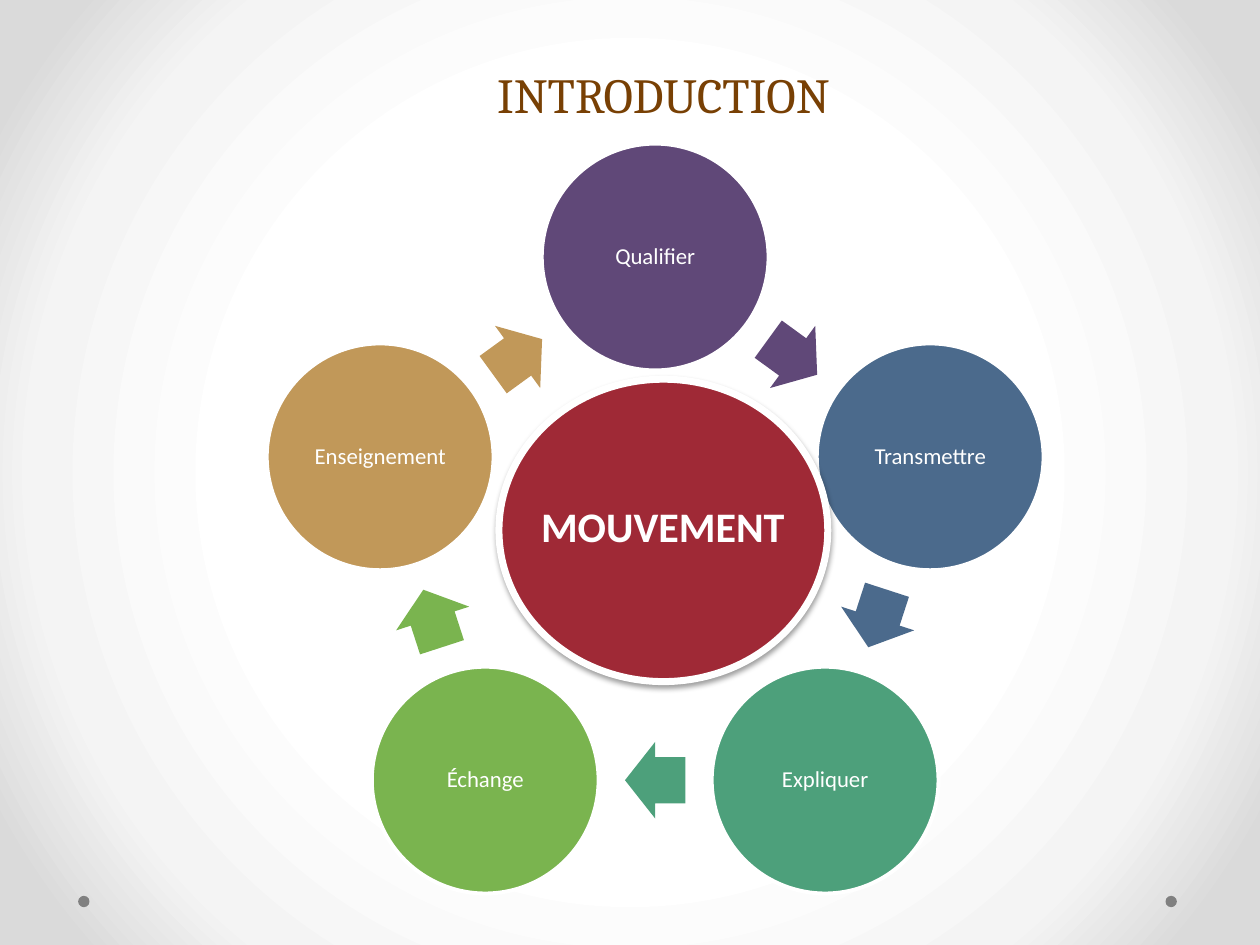
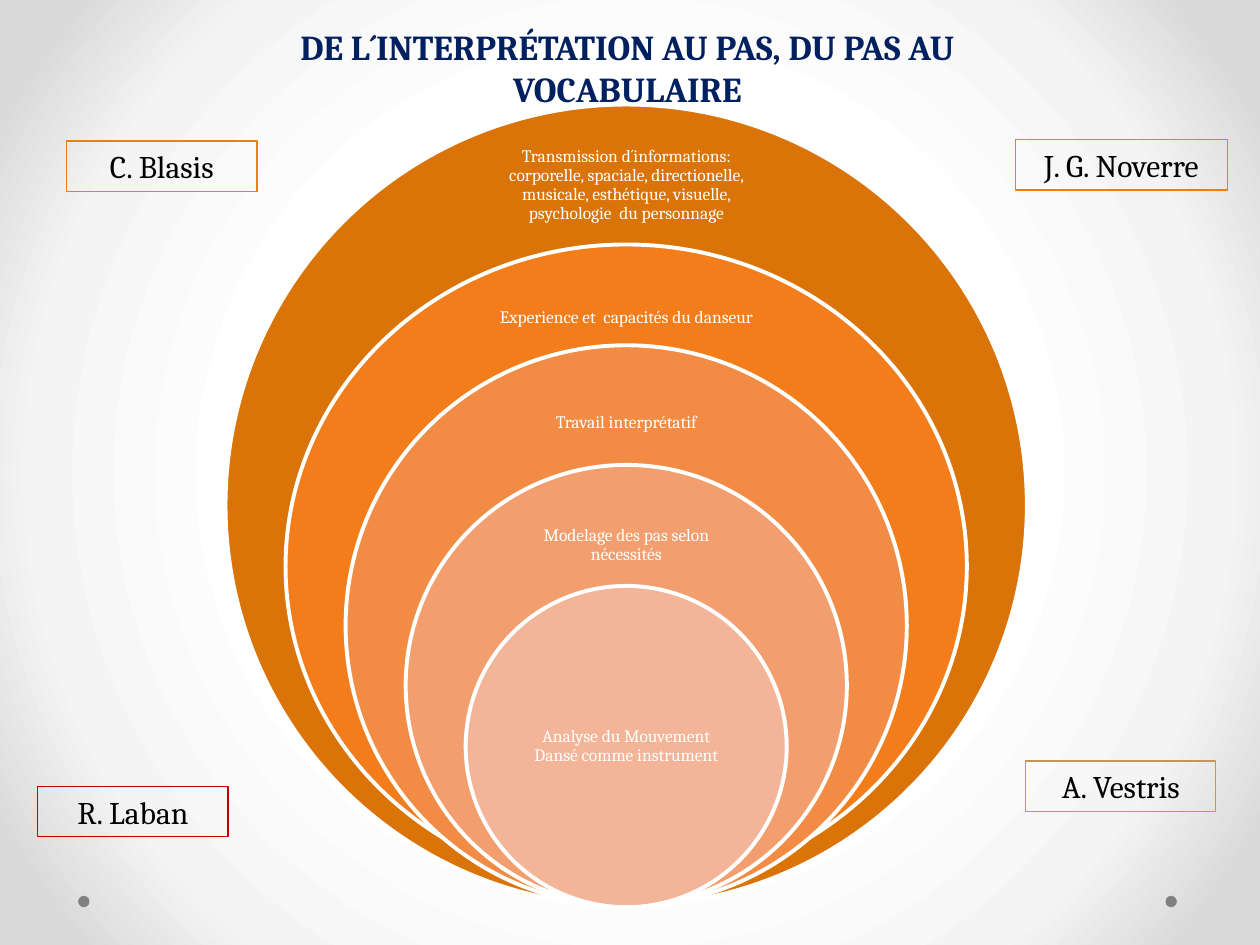
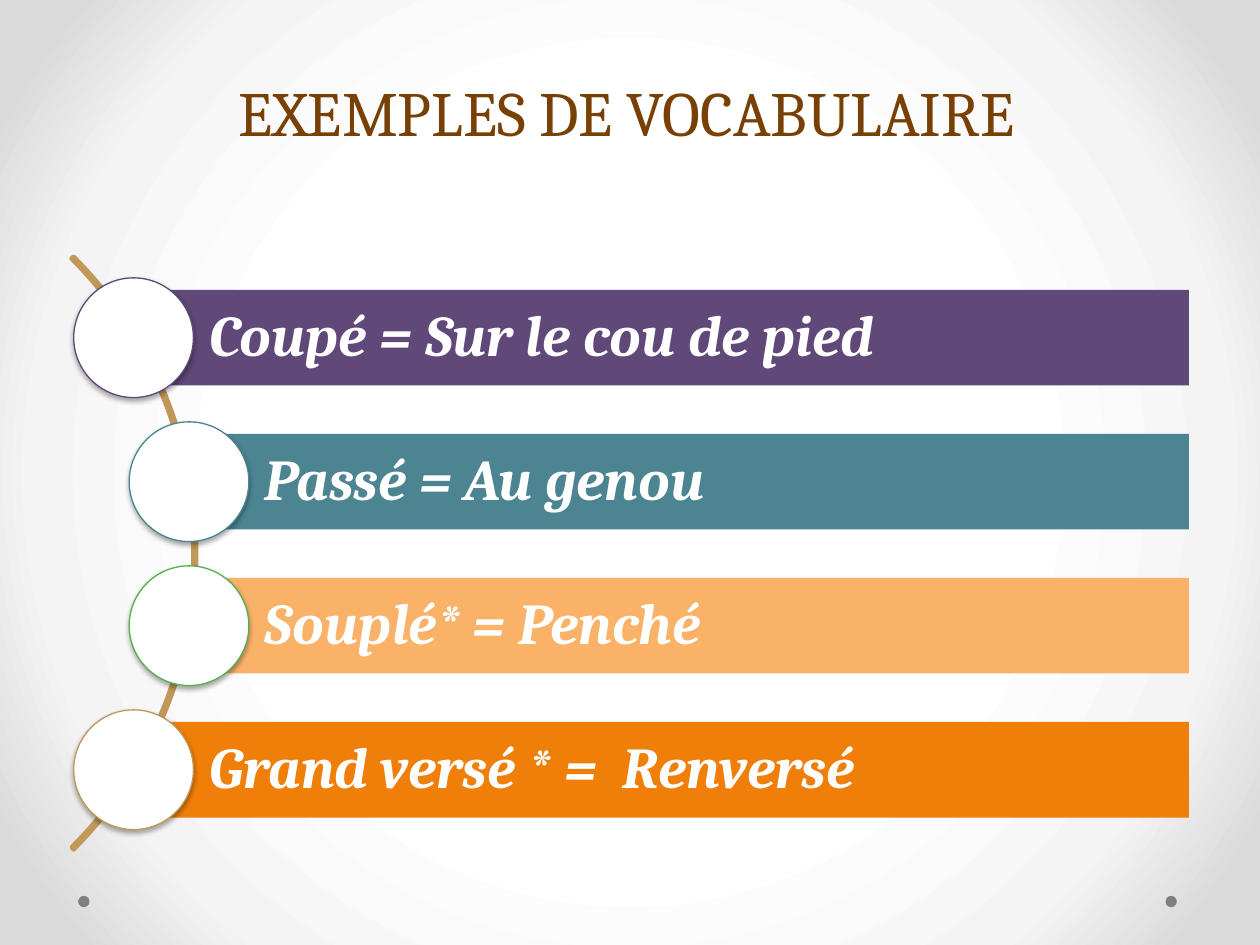
from math import cos, pi, sin

from pptx import Presentation
from pptx.dml.color import RGBColor
from pptx.enum.shapes import MSO_SHAPE
from pptx.enum.text import MSO_ANCHOR, MSO_AUTO_SIZE, PP_ALIGN
from pptx.oxml import parse_xml
from pptx.oxml.ns import nsdecls, qn
from pptx.util import Inches, Pt

# Grid: every length below is in columns or rows
COLUMNS, ROWS = 100, 75

COLORS = {
    "white": "FFFFFF", "black": "000000", "mist": "F4F4F4", "silver": "DADADA",
    "dot": "808080", "brown": "784004", "navy": "002060", "crimson": "9F2936",
    "red": "C00000", "purple": "604878", "blue": "4B6A8C", "sea": "4DA07B",
    "lime": "7AB44F", "sand": "C19859", "teal": "4C8492", "leaf": "57AF4D",
    "apricot": "F9B268", "orange": "F07F09", "ring1": "DA7308",
    "ring2": "F37D1A", "ring3": "F28C45", "ring4": "F39E6E", "ring5": "F4B497",
}

BACKDROP = [(50, "white"), (76, "mist"), (92, "silver")]

# Text formats
TITLE = {"name": "Cambria", "size": Pt(28), "color": "brown", "bold": False}
NODE = {"name": "Calibri", "size": Pt(13), "color": "white"}
HUB = {"name": "Calibri", "size": Pt(24), "color": "white", "bold": True}
RING = {"name": "Cambria", "size": Pt(10), "color": "white"}
NAME = {"name": "Cambria", "size": Pt(18), "color": "black"}
BAR = {"name": "Cambria", "size": Pt(33), "color": "white",
       "bold": True, "italic": True}


def rgb(name):
    return RGBColor.from_string(COLORS[name])


class DeckBuilder:
    def __init__(self):
        self.deck = Presentation()
        self.deck.slide_width, self.deck.slide_height = Inches(10), Inches(7.5)
        self.page = None

    def area(self, left, top, width, height):
        column = self.deck.slide_width / COLUMNS
        row = self.deck.slide_height / ROWS
        return (round(left * column), round(top * row),
                round(width * column), round(height * row))

    def new_page(self):
        layout = self.deck.slide_layouts.get_by_name("Title Only")
        self.page = self.deck.slides.add_slide(layout)

    def decorate_master(self):
        """Move the backdrop and the two footer dots into the slide master."""
        master = self.deck.slide_master
        stops = "".join(
            f'<a:gs pos="{share * 1000}"><a:srgbClr val="{COLORS[color]}"/></a:gs>'
            for share, color in BACKDROP)
        content = master.element.cSld
        content.remove(content.find(qn("p:bg")))
        content.insert(0, parse_xml(
            f'<p:bg {nsdecls("p", "a")}><p:bgPr><a:gradFill><a:gsLst>{stops}'
            '</a:gsLst><a:path path="circle"><a:fillToRect l="50000" t="50000" '
            'r="50000" b="50000"/></a:path></a:gradFill><a:effectLst/>'
            '</p:bgPr></p:bg>'))
        for number, left in enumerate((6.2, 92.5), 101):
            dot = self.shape(MSO_SHAPE.OVAL, (left, 71.1, 0.9, 0.9), "dot")
            dot.element.nvSpPr.cNvPr.set("id", str(number))
            master.shapes.element.append(dot.element)

    def put_text(self, box, text, style, inset=None, align=PP_ALIGN.CENTER,
                 anchor=MSO_ANCHOR.MIDDLE, spacing=0.9):
        frame = box.text_frame
        values = {"word_wrap": True, "auto_size": MSO_AUTO_SIZE.NONE,
                  "vertical_anchor": anchor}
        if inset is not None:
            for side in ("left", "top", "right", "bottom"):
                values[f"margin_{side}"] = Inches(inset)
        for key, value in values.items():
            setattr(frame, key, value)
        para = frame.paragraphs[0]
        para.alignment, para.line_spacing = align, spacing
        span = para.add_run()
        span.text = text
        for key, value in style.items():
            if key == "color":
                span.font.color.rgb = rgb(value)
            else:
                setattr(span.font, key, value)

    def title(self, text, area, anchor=MSO_ANCHOR.TOP, spacing=1.0, **changes):
        box = self.page.shapes.title
        box.left, box.top, box.width, box.height = self.area(*area)
        self.put_text(box, text, TITLE | changes, anchor=anchor, spacing=spacing)

    def label(self, text, area, style, **layout):
        box = self.page.shapes.add_textbox(*self.area(*area))
        self.put_text(box, text, style, **layout)

    def shape(self, kind, area, fill=None, line=None, weight=2.25,
              turn=0, adjust=(), shadow=None):
        shape = self.page.shapes.add_shape(kind, *self.area(*area))
        shape.shadow.inherit = False
        shape.rotation = turn
        for index, value in enumerate(adjust):
            shape.adjustments[index] = value
        if fill:
            shape.fill.solid()
            shape.fill.fore_color.rgb = rgb(fill)
        else:
            shape.fill.background()
        if line:
            shape.line.color.rgb = rgb(line)
            shape.line.width = Pt(weight)
        else:
            shape.line.fill.background()
        if shadow:
            self.cast_shadow(shape, *shadow)
        return shape

    def cast_shadow(self, shape, opacity, distance):
        shape.element.spPr.find(qn("a:effectLst")).append(parse_xml(
            f'<a:outerShdw {nsdecls("a")} blurRad="{Pt(3.1)}" '
            f'dist="{Pt(distance)}" dir="5400000" rotWithShape="0">'
            f'<a:srgbClr val="{COLORS["black"]}">'
            f'<a:alpha val="{opacity * 1000}"/></a:srgbClr></a:outerShdw>'))

    def centered(self, kind, x, y, width, height, **look):
        area = (x - width / 2, y - height / 2, width, height)
        return self.shape(kind, area, **look)


def build_cycle(builder):
    builder.title("INTRODUCTION", (24.9, 4.6, 55.5, 5.7))
    steps = [("Qualifier", "purple"), ("Transmettre", "blue"),
             ("Expliquer", "sea"), ("Échange", "lime"), ("Enseignement", "sand")]
    center_x, center_y, radius = 52, 43.35, 22.95
    turn = 360 / len(steps)

    def on_circle(degrees, distance):
        angle = degrees * pi / 180
        return center_x + distance * sin(angle), center_y - distance * cos(angle)

    # Circles on the corners, arrows on the middle of the sides
    for index, (text, color) in enumerate(steps):
        corner = index * turn
        middle = corner + turn / 2
        node = builder.centered(MSO_SHAPE.OVAL, *on_circle(corner, radius),
                                18, 18, fill=color, line="white")
        builder.put_text(node, text, NODE, inset=0.02)
        apothem = radius * cos(pi / len(steps))
        builder.centered(MSO_SHAPE.RIGHT_ARROW, *on_circle(middle, apothem),
                         4.8, 6.1, fill=color, turn=middle, adjust=(0.6, 0.5))

    # Hub
    builder.shape(MSO_SHAPE.FLOWCHART_CONNECTOR, (39.6, 30.1, 26.1, 24),
                  "crimson", "white", weight=4, shadow=(38, 1.6))
    builder.label("MOUVEMENT", (41.2, 39.2, 22.8, 5), HUB, spacing=1.0)


def build_rings(builder):
    builder.title("DE L´INTERPRÉTATION AU PAS, DU PAS AU VOCABULAIRE",
                  (15.5, 1.5, 68.6, 7.7), size=Pt(20), color="navy", bold=True)
    # Text, then top and height of the ring, then top, width, height of the text
    rings = [
        ("Transmission d´informations: corporelle, spaciale, directionelle, "
         "musicale, esthétique, visuelle, psychologie  du personnage",
         8.3, 63.6, 11.5, 23.9, 6.4),
        ("Experience et  capacités du danseur", 19.4, 51.1, 22.3, 23.3, 5.9),
        ("Travail interprétatif", 27.4, 44.5, 30.5, 23.1, 6.1),
        ("Modelage des pas selon nécessités", 36.9, 35, 40.1, 18.9, 6.3),
        ("Analyse du Mouvement Dansé comme instrument",
         46.5, 25.5, 52.9, 18, 12.7),
    ]
    center, outer, step = 49.7, 63.6, 9.53
    for index, (text, top, height, text_top, width, text_height) in enumerate(rings):
        diameter = outer - index * step
        builder.shape(MSO_SHAPE.OVAL,
                      (center - diameter / 2, top, diameter, height),
                      f"ring{index + 1}", "white")
        builder.label(text, (center - width / 2, text_top, width, text_height),
                      RING, inset=0.08)

    # Framed names in the corners
    names = [("J. G. Noverre", 80.6, 11.1, 16.8, "orange"),
             ("A. Vestris", 81.4, 60.4, 15.1, "sand"),
             ("R. Laban", 3, 62.4, 15.1, "red"),
             ("C. Blasis", 5.3, 11.2, 15.1, "orange")]
    for text, left, top, width, color in names:
        tag = builder.shape(MSO_SHAPE.RECTANGLE, (left, top, width, 4),
                            line=color, weight=0.75)
        builder.put_text(tag, text, NAME, spacing=1.0)


def build_vocabulary(builder):
    builder.title("EXEMPLES DE VOCABULAIRE", (4.7, -5.2, 90, 17.5),
                  anchor=MSO_ANCHOR.BOTTOM, spacing=Pt(58), size=Pt(36))
    builder.shape(MSO_SHAPE.BLOCK_ARC, (-51, 10.6, 66.6, 66.6),
                  line="sand", adjust=(189, 27, 0.004))
    # Text, left edge, bar colour, bullet outline
    terms = [("Coupé = Sur le cou de pied", 10.6, "purple", "purple"),
             ("Passé = Au genou", 15, "teal", "teal"),
             ("Souplé* = Penché", 15, "apricot", "leaf"),
             ("Grand versé * =  Renversé", 10.6, "orange", "sand")]
    first, pitch, height, right = 23, 11.43, 7.6, 94.35
    for index, (text, left, color, outline) in enumerate(terms):
        top = first + index * pitch
        bar = builder.shape(MSO_SHAPE.RECTANGLE,
                            (left, top, right - left, height), color)
        builder.put_text(bar, text, BAR, inset=0.09, align=PP_ALIGN.LEFT)
        bar.text_frame.margin_left = Inches(0.6)
        builder.centered(MSO_SHAPE.OVAL, left, top + height / 2, 9.5, 9.5,
                         fill="white", line=outline, weight=0.75,
                         shadow=(35, 1.8))


def main():
    builder = DeckBuilder()
    for number, build in enumerate((build_cycle, build_rings, build_vocabulary)):
        builder.new_page()
        if number == 0:
            builder.decorate_master()
        build(builder)
    builder.deck.save("out.pptx")


if __name__ == "__main__":
    main()
